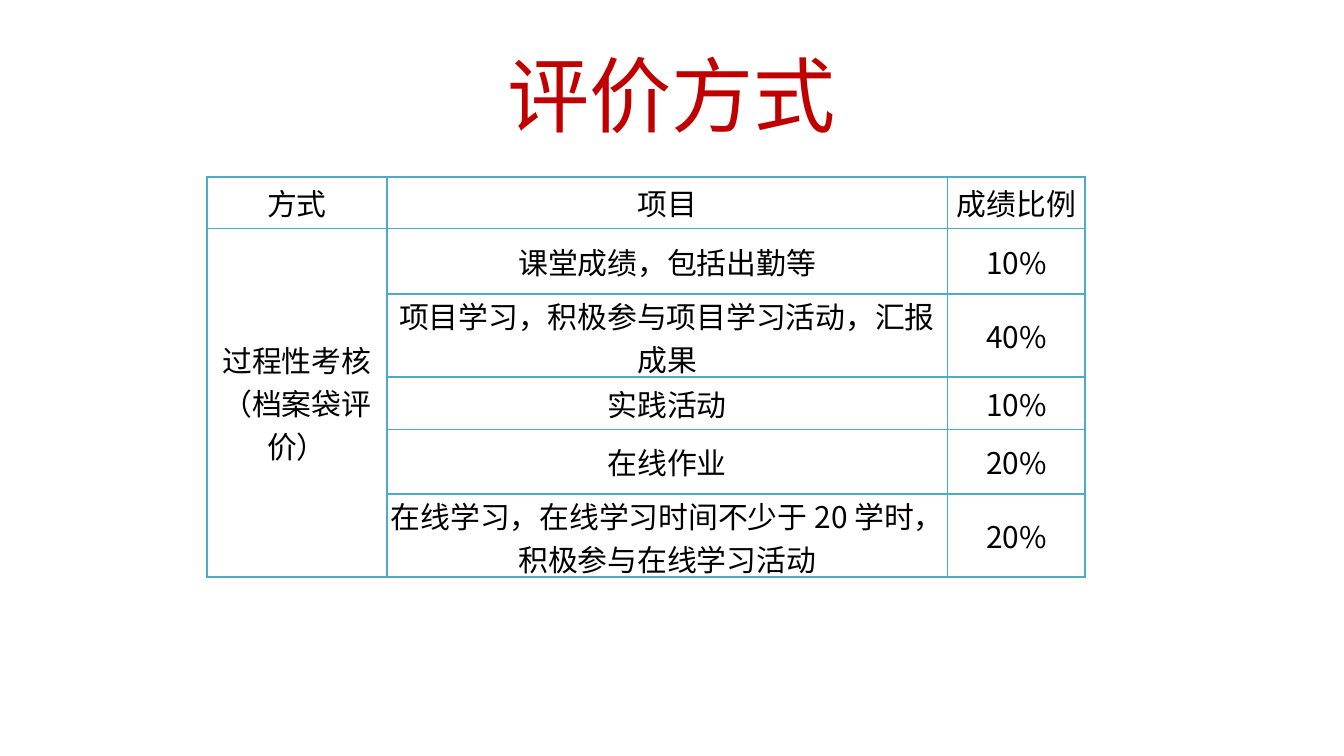
from dataclasses import dataclass

from lxml import etree
from pptx import Presentation
from pptx.dml.color import RGBColor
from pptx.enum.text import MSO_ANCHOR, PP_ALIGN
from pptx.oxml.ns import qn
from pptx.util import Cm, Pt

CENTER = PP_ALIGN.CENTER
MIDDLE = MSO_ANCHOR.MIDDLE


@dataclass(frozen=True)
class Theme:
    font: str = "Noto Sans CJK SC"
    title: str = "C00000"
    text: str = "000000"
    border: str = "4BACC6"
    title_size: int = 44
    table_size: int = 16
    border_width: int = 1


THEME = Theme()

HEADER = ["方式", "项目", "成绩比例"]
METHOD = "过程性考核\n（档案袋评价）"
ITEMS = [
    ("课堂成绩，包括出勤等", "10%"),
    ("项目学习，积极参与项目学习活动，汇报成果", "40%"),
    ("实践活动", "10%"),
    ("在线作业", "20%"),
    ("在线学习，在线学习时间不少于 20 学时，积极参与在线学习活动", "20%"),
]
COL_WIDTHS = [3.4, 10.6, 2.6]
ROW_HEIGHTS = [0.97, 1.24, 1.57, 0.99, 1.22, 1.57]


def write_text(tf, text, size, color):
    """Fill a text frame with centred paragraphs, one for each line of text."""
    tf.text = text
    for p in tf.paragraphs:
        p.alignment = CENTER
        for r in p.runs:
            for name, value in {"name": THEME.font, "size": Pt(size)}.items():
                setattr(r.font, name, value)
            r.font.color.rgb = RGBColor.from_string(color)
            ea = etree.SubElement(r.font._element, qn("a:ea"))
            ea.set("typeface", THEME.font)


def add_borders(cell):
    tc_pr = cell._tc.get_or_add_tcPr()
    for side in ("lnL", "lnR", "lnT", "lnB"):
        ln = etree.SubElement(tc_pr, qn(f"a:{side}"), w=str(Pt(THEME.border_width)))
        fill = etree.SubElement(ln, qn("a:solidFill"))
        etree.SubElement(fill, qn("a:srgbClr"), val=THEME.border)


def format_cell(cell):
    add_borders(cell)
    cell.fill.background()
    layout = {"vertical_anchor": MIDDLE, "margin_left": 0, "margin_right": 0,
              "margin_top": 0, "margin_bottom": 0}
    for name, value in layout.items():
        setattr(cell, name, value)


def add_title(slide, left, top, width, height):
    tf = slide.shapes.add_textbox(left, top, width, height).text_frame
    tf.word_wrap = True
    tf.vertical_anchor = MIDDLE
    write_text(tf, "评价方式", THEME.title_size, THEME.title)


def add_assessment_table(slide, left, top, width, height):
    """Place the grading table, its columns and rows scaled to the box."""
    rows = [HEADER] + [(METHOD if i == 0 else "", *item)
                       for i, item in enumerate(ITEMS)]
    table = slide.shapes.add_table(
        len(rows), len(HEADER), left, top, width, height).table
    table.first_row = table.horz_banding = False
    for col, share in zip(table.columns, COL_WIDTHS):
        col.width = int(width * share / sum(COL_WIDTHS))
    for row, share in zip(table.rows, ROW_HEIGHTS):
        row.height = int(height * share / sum(ROW_HEIGHTS))
    for i, row in enumerate(rows):
        for j, text in enumerate(row):
            cell = table.cell(i, j)
            format_cell(cell)
            write_text(cell.text_frame, text, THEME.table_size, THEME.text)
    table.cell(1, 0).merge(table.cell(len(ITEMS), 0))


def main():
    prs = Presentation()
    prs.slide_width, prs.slide_height = Cm(25.4), Cm(14.29)
    slide = prs.slides.add_slide(prs.slide_layouts[6])
    add_title(slide, Cm(1.27), Cm(0.58), Cm(22.86), Cm(2.39))
    add_assessment_table(slide, Cm(3.91), Cm(3.35), Cm(16.6), Cm(7.56))
    prs.save("out.pptx")


if __name__ == "__main__":
    main()
